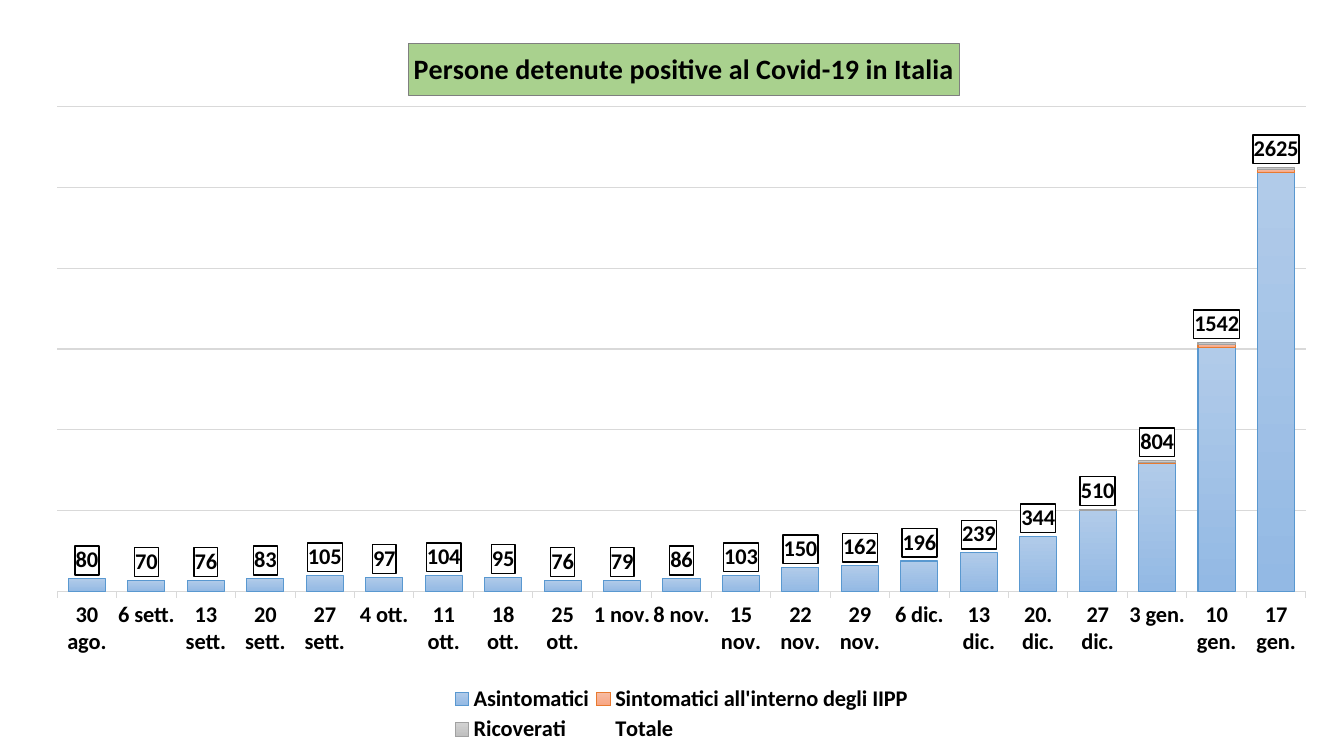
from lxml.etree import SubElement
from pptx import Presentation
from pptx.chart.data import CategoryChartData
from pptx.dml.color import RGBColor
from pptx.enum.chart import XL_CHART_TYPE, XL_LABEL_POSITION, XL_LEGEND_POSITION, XL_TICK_LABEL_POSITION, XL_TICK_MARK
from pptx.oxml import parse_xml
from pptx.oxml.ns import nsdecls, qn
from pptx.util import Inches, Pt

BLACK = RGBColor(0x00, 0x00, 0x00)
GREEN = RGBColor(0xA9, 0xD1, 0x8E)
GRAY = RGBColor(0x7F, 0x7F, 0x7F)
PALE = RGBColor(0xD9, 0xD9, 0xD9)
BARS = [
    (RGBColor(0xB1, 0xCB, 0xE9), RGBColor(0x93, 0xB9, 0xE4), RGBColor(0x59, 0x98, 0xD0)),
    (RGBColor(0xF7, 0xBD, 0xA5), RGBColor(0xF8, 0xA5, 0x82), RGBColor(0xE8, 0x7A, 0x30)),
    (RGBColor(0xD2, 0xD2, 0xD2), RGBColor(0xC0, 0xC0, 0xC0), RGBColor(0xA1, 0xA1, 0xA1)),
]


def write(frame, text, **form):
    frame.text = text
    font = frame.paragraphs[0].runs[0].font
    for key, value in form.items():
        setattr(font, key, value)
    font.color.rgb = BLACK


def place(part, index, **share):
    for old in part.findall(qn("c:layout")):
        part.remove(old)
    layout = parse_xml(f"<c:layout {nsdecls('c')}/>")
    manual = SubElement(layout, qn("c:manualLayout"))
    if part.tag == qn("c:plotArea"):
        SubElement(manual, qn("c:layoutTarget")).set("val", "inner")
    for axis in "xy":
        SubElement(manual, qn(f"c:{axis}Mode")).set("val", "edge")
    for key, value in share.items():
        SubElement(manual, qn(f"c:{key}")).set("val", str(value))
    part.insert(index, layout)


deck = Presentation()
deck.slide_width, deck.slide_height = Inches(13.33), Inches(7.5)
slide = deck.slides.add_slide(deck.slide_layouts[6])

data = CategoryChartData()
data.categories = [
    "30 ago.", "6 sett.", "13 sett.", "20 sett.", "27 sett.", "4 ott.", "11 ott.",
    "18 ott.", "25 ott.", "1 nov.", "8 nov.", "15 nov.", "22 nov.", "29 nov.",
    "6 dic.", "13 dic.", "20. dic.", "27 dic.", "3 gen.", "10 gen.", "17 gen.",
]
data.add_series("Asintomatici", [
    80, 70, 70, 80, 100, 90, 100, 90, 70, 70, 80, 100, 150, 160, 190, 240, 340, 500, 790, 1510, 2590])
data.add_series("Sintomatici all'interno degli IIPP", [0] * 18 + [10, 20, 20])
data.add_series("Ricoverati", [0] * 17 + [10] * 4)
data.add_series("Totale", [
    80, 70, 76, 83, 105, 97, 104, 95, 76, 79, 86, 103, 150, 162, 196, 239, 344, 510, 804, 1542, 2625])

chart = slide.shapes.add_chart(
    XL_CHART_TYPE.COLUMN_STACKED, Inches(0.31), Inches(0.22), Inches(12.9), Inches(7.19), data).chart
chart.font.name, chart.font.size, chart.font.bold = "Calibri", Pt(16), True
chart.font.color.rgb = BLACK

chart.has_title = True
title = chart.chart_title
write(title.text_frame, "Persone detenute positive al Covid-19 in Italia", name="Calibri", size=Pt(20), bold=True)
title.format.fill.solid()
title.format.fill.fore_color.rgb = GREEN
title.format.line.color.rgb = GRAY
title.format.line.width = Pt(0.75)
title.include_in_layout = False
place(title._element, 1, x=0.29, y=0.03)

chart.has_legend = True
legend = chart.legend
legend.position = XL_LEGEND_POSITION.BOTTOM
legend.include_in_layout = False
place(legend._element, 1, x=0.32, y=0.91, w=0.36, h=0.09)
place(chart._chartSpace.chart.plotArea, 0, x=0.02, y=0.116, w=0.96, h=0.67)

days = chart.category_axis
days.major_tick_mark = XL_TICK_MARK.OUTSIDE
days.tick_label_position = XL_TICK_LABEL_POSITION.LOW
days.format.line.color.rgb = PALE
days.format.line.width = Pt(0.75)
count = chart.value_axis
count.visible = False
count.minimum_scale, count.maximum_scale, count.major_unit = 0, 3000, 500
count.has_major_gridlines = True
count.major_gridlines.format.line.color.rgb = PALE
count.major_gridlines.format.line.width = Pt(0.75)

plot = chart.plots[0]
plot.gap_width, plot.overlap, plot.vary_by_categories = 60, 100, False
for bar, (top, base, edge) in zip(plot.series, BARS):
    bar.invert_if_negative = False
    fill = bar.format.fill
    fill.gradient()
    fill.gradient_angle = 270
    for stop, color, spot in zip(fill.gradient_stops, (top, base), (0, 1)):
        stop.color.rgb = color
        stop.position = spot
    bar.format.line.color.rgb = edge
    bar.format.line.width = Pt(0.75)

total = plot.series[3]
total.format.fill.background()
total.format.line.fill.background()
labels = total.data_labels
labels.show_value = True
labels.position = XL_LABEL_POSITION.INSIDE_BASE
labels.font.name, labels.font.size, labels.font.bold = "Calibri", Pt(16), True
labels.font.color.rgb = BLACK
frame = parse_xml(
    f'<c:spPr {nsdecls("c", "a")}><a:solidFill><a:srgbClr val="FFFFFF"/></a:solidFill>'
    '<a:ln w="12700"><a:solidFill><a:srgbClr val="000000"/></a:solidFill></a:ln></c:spPr>')
labels._element.find(qn("c:txPr")).addprevious(frame)

deck.save("out.pptx")
